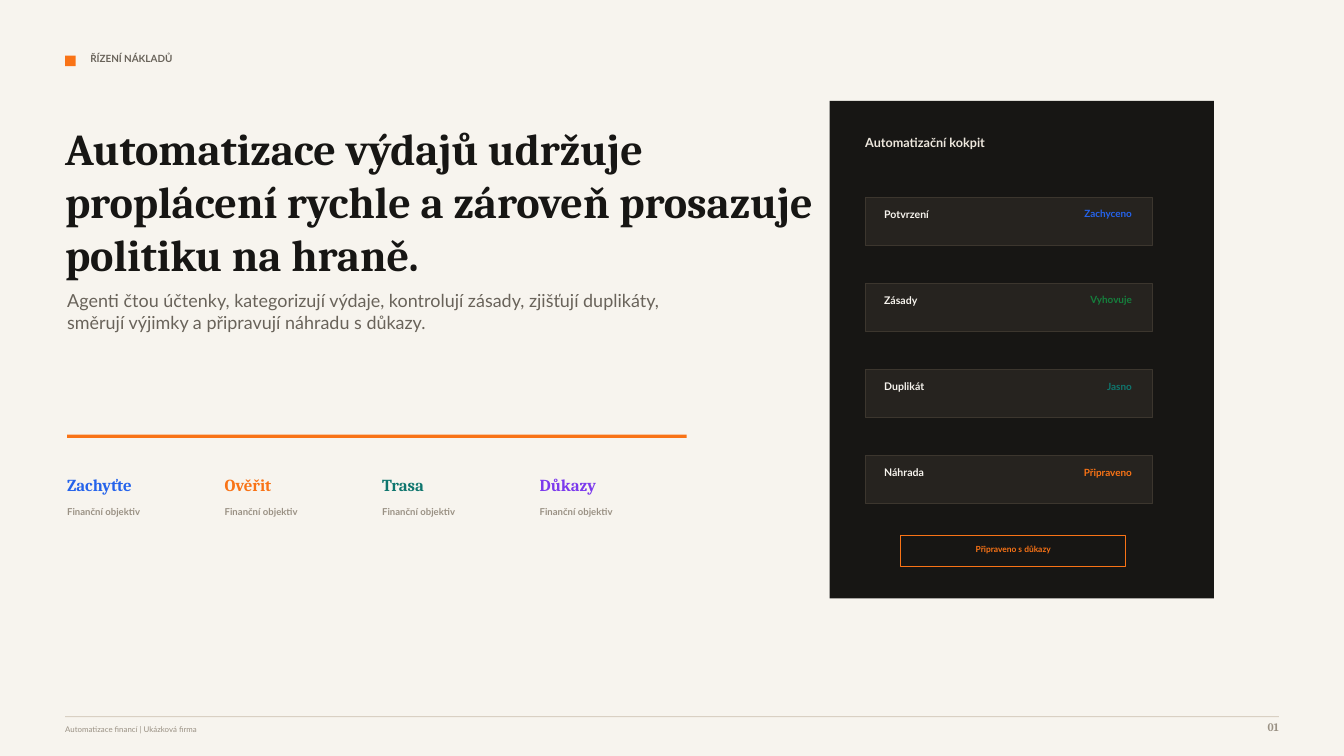
from dataclasses import dataclass

from pptx import Presentation
from pptx import util as u
from pptx.dml.color import RGBColor
from pptx.enum import shapes, text

# Slide grid: 1280 columns by 720 rows
WIDTH, HEIGHT = u.Inches(13.33), u.Inches(7.5)
COLS, ROWS = 1280, 720


@dataclass(frozen=True)
class Theme:
    # Colours
    paper: str = "F7F4EE"
    ink: str = "171614"
    body: str = "69635A"
    muted: str = "9A9184"
    hairline: str = "D9D0C3"
    cream: str = "EDE7DD"
    row: str = "26231F"
    row_line: str = "3C362E"
    orange: str = "F97316"
    blue: str = "2563EB"
    green: str = "15803D"
    teal: str = "0F766E"
    violet: str = "7C3AED"
    # Fonts
    serif: str = "Cambria"
    sans: str = "Lato"
    # Type sizes
    title: float = 31.5
    lead: float = 12.8
    pillar: float = 12
    panel_title: float = 9
    page: float = 8.2
    row_name: float = 7.5
    label: float = 7.1
    caption: float = 6.8
    badge: float = 6
    footer: float = 5.6


T = Theme()
LEFT, CENTER, RIGHT = text.PP_ALIGN.LEFT, text.PP_ALIGN.CENTER, text.PP_ALIGN.RIGHT


def place(x, y, w, h):
    """Turn grid columns and rows into slide lengths."""
    return (round(WIDTH * x / COLS), round(HEIGHT * y / ROWS),
            round(WIDTH * w / COLS), round(HEIGHT * h / ROWS))


def add_block(s, box, fill=None, line=None):
    sp = s.shapes.add_shape(shapes.MSO_SHAPE.RECTANGLE, *place(*box))
    sp.shadow.inherit = False
    if fill:
        sp.fill.solid()
        sp.fill.fore_color.rgb = RGBColor.from_string(fill)
    else:
        sp.fill.background()
    if line:
        sp.line.color.rgb = RGBColor.from_string(line)
        sp.line.width = u.Pt(0.75)
    else:
        sp.line.fill.background()


def add_text(s, box, words, size, color, name=T.sans, bold=True, align=LEFT):
    tf = s.shapes.add_textbox(*place(*box)).text_frame
    frame = dict(word_wrap=True, margin_left=0, margin_top=0,
                 margin_right=0, margin_bottom=0)
    for key, value in frame.items():
        setattr(tf, key, value)
    p = tf.paragraphs[0]
    p.alignment = align
    r = p.add_run()
    r.text = words
    for key, value in dict(name=name, size=u.Pt(size), bold=bold).items():
        setattr(r.font, key, value)
    r.font.color.rgb = RGBColor.from_string(color)


def add_pillar(s, x, name, color):
    add_text(s, (x, 452, 120, 20), name, T.pillar, color, T.serif)
    add_text(s, (x, 482, 110, 16), "Finanční objektiv", T.caption, T.muted)


def add_check(s, y, name, status, color):
    add_block(s, (824, y, 274, 46), T.row, T.row_line)
    add_text(s, (842, y + 10, 130, 16), name, T.row_name, T.paper)
    add_text(s, (982, y + 10, 96, 16), status, T.label, color, align=RIGHT)


def main():
    prs = Presentation()
    prs.slide_width, prs.slide_height = WIDTH, HEIGHT
    s = prs.slides.add_slide(prs.slide_layouts[6])
    s.background.fill.solid()
    s.background.fill.fore_color.rgb = RGBColor.from_string(T.paper)

    # Section label
    add_block(s, (62, 53, 10, 10), T.orange)
    add_text(s, (86, 50, 560, 18), "ŘÍZENÍ NÁKLADŮ", T.label, T.body)

    # Headline and lead
    add_text(s, (62, 116, 740, 126),
             "Automatizace výdajů udržuje proplácení rychle a zároveň "
             "prosazuje politiku na hraně.", T.title, T.ink, T.serif)
    add_text(s, (64, 276, 620, 88),
             "Agenti čtou účtenky, kategorizují výdaje, kontrolují zásady, "
             "zjišťují duplikáty, směrují výjimky a připravují náhradu s důkazy.",
             T.lead, T.body, bold=False)

    # Four pillars under the orange rule
    add_block(s, (64, 414, 590, 3), T.orange)
    pillars = [("Zachyťte", T.blue), ("Ověřit", T.orange),
               ("Trasa", T.teal), ("Důkazy", T.violet)]
    for i, (name, color) in enumerate(pillars):
        add_pillar(s, 64 + 150 * i, name, color)

    # Cockpit panel
    add_block(s, (790, 96, 366, 474), T.ink)
    add_text(s, (824, 128, 220, 24), "Automatizační kokpit", T.panel_title, T.cream)
    checks = [("Potvrzení", "Zachyceno", T.blue), ("Zásady", "Vyhovuje", T.green),
              ("Duplikát", "Jasno", T.teal), ("Náhrada", "Připraveno", T.orange)]
    for i, check in enumerate(checks):
        add_check(s, 188 + 82 * i, *check)
    add_block(s, (858, 510, 214, 30), line=T.orange)
    add_text(s, (870, 518, 190, 13), "Připraveno s důkazy", T.badge, T.orange,
             align=CENTER)

    # Footer
    add_block(s, (62, 682, 1156, 1), T.hairline)
    add_text(s, (62, 690, 760, 14), "Automatizace financí | Ukázková firma",
             T.footer, T.muted, bold=False)
    add_text(s, (1170, 686, 48, 18), "01", T.page, T.muted, T.serif, align=RIGHT)

    prs.save("out.pptx")


if __name__ == "__main__":
    main()
